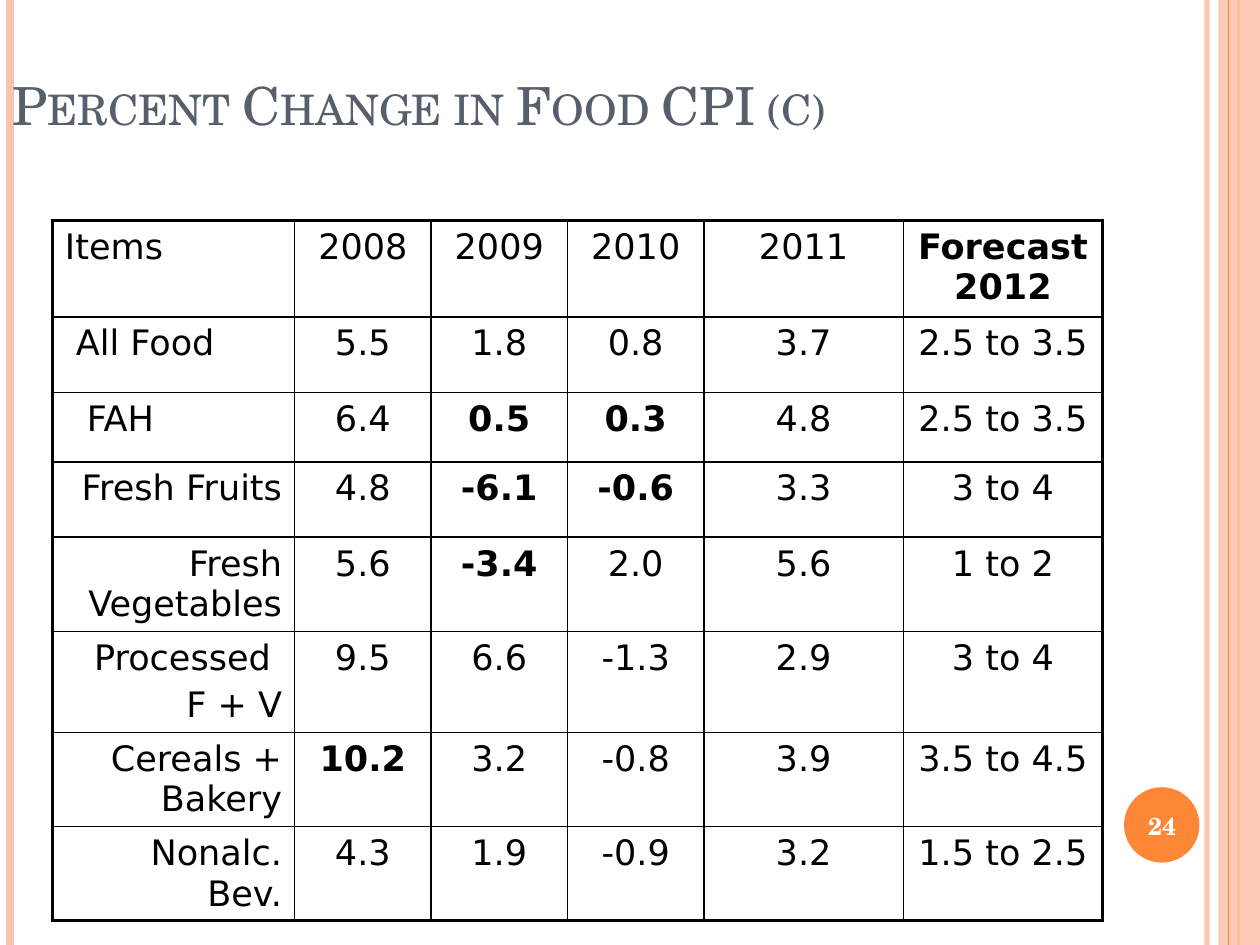
from dataclasses import dataclass

from lxml.etree import SubElement
from pptx import Presentation
from pptx.dml.color import RGBColor
from pptx.enum.shapes import MSO_CONNECTOR, MSO_SHAPE
from pptx.enum.text import MSO_ANCHOR, MSO_AUTO_SIZE, PP_ALIGN
from pptx.oxml.ns import qn
from pptx.util import Cm, Pt

PEACH = RGBColor(0xFE, 0xC3, 0xAE)
ORANGE = RGBColor(0xFE, 0x86, 0x37)
SLATE = RGBColor(0x57, 0x5F, 0x6D)
BLACK = RGBColor(0, 0, 0)
WHITE = RGBColor(0xFF, 0xFF, 0xFF)

SERIF = "TeX Gyre Schola"
SANS = "DejaVu Sans"

SLIDE_WIDTH, SLIDE_HEIGHT = Cm(25.4), Cm(19.05)
INNER_BORDER, OUTER_BORDER = Pt(1), Pt(2.25)


@dataclass(frozen=True)
class Stripe:
    x: float
    weight: float
    color: RGBColor
    opacity: int = 100


@dataclass(frozen=True)
class FoodItem:
    label: str
    values: tuple[str, ...]
    height: float
    align: PP_ALIGN = PP_ALIGN.RIGHT
    indent: float = 0


STRIPES = (
    Stripe(24.33, 3, PEACH, 93),
    Stripe(0.2, 4.5, PEACH),
    Stripe(24.97, 1.5, ORANGE),
)
THIN_STRIPE = Stripe(24.77, 0.75, ORANGE)

COLUMN_WIDTHS = (4.88, 2.75, 2.75, 2.75, 4.02, 4.02)
ITEMS = (
    FoodItem("Items", ("2008", "2009", "2010", "2011", "Forecast 2012"), 1.95, PP_ALIGN.LEFT),
    FoodItem("All Food", ("5.5", "1.8", "0.8", "3.7", "2.5 to 3.5"), 1.52, PP_ALIGN.LEFT, 0.22),
    FoodItem("FAH", ("6.4", "0.5", "0.3", "4.8", "2.5 to 3.5"), 1.4, PP_ALIGN.LEFT, 0.44),
    FoodItem("Fresh Fruits", ("4.8", "-6.1", "-0.6", "3.3", "3 to 4"), 1.52),
    FoodItem("Fresh Vegetables", ("5.6", "-3.4", "2.0", "5.6", "1 to 2"), 1.52),
    FoodItem("Processed \nF + V", ("9.5", "6.6", "-1.3", "2.9", "3 to 4"), 1.65),
    FoodItem("Cereals + Bakery", ("10.2", "3.2", "-0.8", "3.9", "3.5 to 4.5"), 1.52),
    FoodItem("Nonalc. Bev.", ("4.3", "1.9", "-0.9", "3.2", "1.5 to 2.5"), 1.47),
)
EMPHASIZED = {"Forecast 2012", "0.5", "0.3", "-6.1", "-0.6", "-3.4", "10.2"}


def set_opacity(element, percent: int) -> None:
    color = next(element.iter(qn("a:srgbClr")))
    SubElement(color, qn("a:alpha"), val=str(percent * 1000))


def draw_stripe(slide, stripe: Stripe) -> None:
    x = Cm(stripe.x)
    line = slide.shapes.add_connector(MSO_CONNECTOR.STRAIGHT, x, 0, x, SLIDE_HEIGHT)
    line.line.color.rgb = stripe.color
    line.line.width = Pt(stripe.weight)
    properties = line._element.spPr
    if stripe.opacity < 100:
        set_opacity(properties, stripe.opacity)
    SubElement(properties, qn("a:effectLst"))


def draw_plain_shape(slide, kind: MSO_SHAPE, left, top, width, height, color: RGBColor):
    shape = slide.shapes.add_shape(kind, left, top, width, height)
    shape.shadow.inherit = False
    shape.fill.solid()
    shape.fill.fore_color.rgb = color
    shape.line.fill.background()
    return shape


def draw_decoration(slide) -> None:
    for stripe in STRIPES:
        draw_stripe(slide, stripe)
    side_band = draw_plain_shape(
        slide, MSO_SHAPE.RECTANGLE, Cm(24.56), 0, Cm(0.84), SLIDE_HEIGHT, PEACH
    )
    set_opacity(side_band._element.spPr, 87)
    draw_stripe(slide, THIN_STRIPE)
    draw_plain_shape(
        slide, MSO_SHAPE.OVAL, Cm(22.66), Cm(15.87), Cm(1.52), Cm(1.52), ORANGE
    )


def format_title(slide) -> None:
    title = slide.shapes.title
    title.left, title.top, title.width, title.height = 0, Cm(0.64), Cm(22.86), Cm(2.22)
    frame = title.text_frame
    frame.text = "Percent Change in Food CPI (c)"
    frame.vertical_anchor = MSO_ANCHOR.BOTTOM
    frame.auto_size = MSO_AUTO_SIZE.NONE
    heading = frame.paragraphs[0]
    heading.alignment = PP_ALIGN.LEFT
    heading.font.size = Pt(30)
    heading.font.name = SERIF
    heading.font.color.rgb = SLATE
    heading.runs[0]._r.get_or_add_rPr().set("cap", "small")
    # The title lies above the stripe at the left edge.
    slide.shapes._spTree.append(title._element)


def set_borders(cell, row: int, column: int) -> None:
    outer_sides = {
        "a:lnL": column == 0,
        "a:lnR": column == len(COLUMN_WIDTHS) - 1,
        "a:lnT": row == 0,
        "a:lnB": row == len(ITEMS) - 1,
    }
    properties = cell._tc.get_or_add_tcPr()
    for side, is_outer in outer_sides.items():
        weight = OUTER_BORDER if is_outer else INNER_BORDER
        border = SubElement(properties, qn(side), w=str(int(weight)))
        fill = SubElement(border, qn("a:solidFill"))
        SubElement(fill, qn("a:srgbClr"), val=str(BLACK))


def write_cell(cell, text: str, align: PP_ALIGN) -> None:
    cell.text = text
    for paragraph in cell.text_frame.paragraphs:
        paragraph.alignment = align
        paragraph.space_before = Pt(4)
        paragraph.font.size = Pt(20)
        paragraph.font.name = SANS
        paragraph.font.bold = text in EMPHASIZED
        paragraph.font.color.rgb = BLACK


def draw_price_table(slide) -> None:
    frame = slide.shapes.add_table(
        len(ITEMS), len(COLUMN_WIDTHS), Cm(1.06), Cm(4.44), Cm(21.17), Cm(14.35)
    )
    table = frame.table
    table.first_row = table.horz_banding = False
    for column, width in zip(table.columns, COLUMN_WIDTHS):
        column.width = Cm(width)
    for row, item in enumerate(ITEMS):
        table.rows[row].height = Cm(item.height)
        for column, text in enumerate((item.label, *item.values)):
            cell = table.cell(row, column)
            write_cell(cell, text, PP_ALIGN.CENTER if column else item.align)
            set_borders(cell, row, column)
            cell.fill.background()
        table.cell(row, 0).margin_left = Cm(0.25 + item.indent)
    frame.height = Cm(14.35)


def draw_page_number(slide) -> None:
    box = slide.shapes.add_textbox(Cm(22.58), Cm(15.93), Cm(1.7), Cm(1.45))
    frame = box.text_frame
    frame.word_wrap = True
    frame.vertical_anchor = MSO_ANCHOR.MIDDLE
    frame.text = "24"
    number = frame.paragraphs[0]
    number.alignment = PP_ALIGN.CENTER
    number.font.size = Pt(14)
    number.font.name = SERIF
    number.font.bold = True
    number.font.color.rgb = WHITE


def main() -> None:
    presentation = Presentation()
    presentation.slide_width, presentation.slide_height = SLIDE_WIDTH, SLIDE_HEIGHT
    slide = presentation.slides.add_slide(presentation.slide_layouts.get_by_name("Title Only"))
    draw_decoration(slide)
    format_title(slide)
    draw_price_table(slide)
    draw_page_number(slide)
    presentation.save("out.pptx")


if __name__ == "__main__":
    main()
